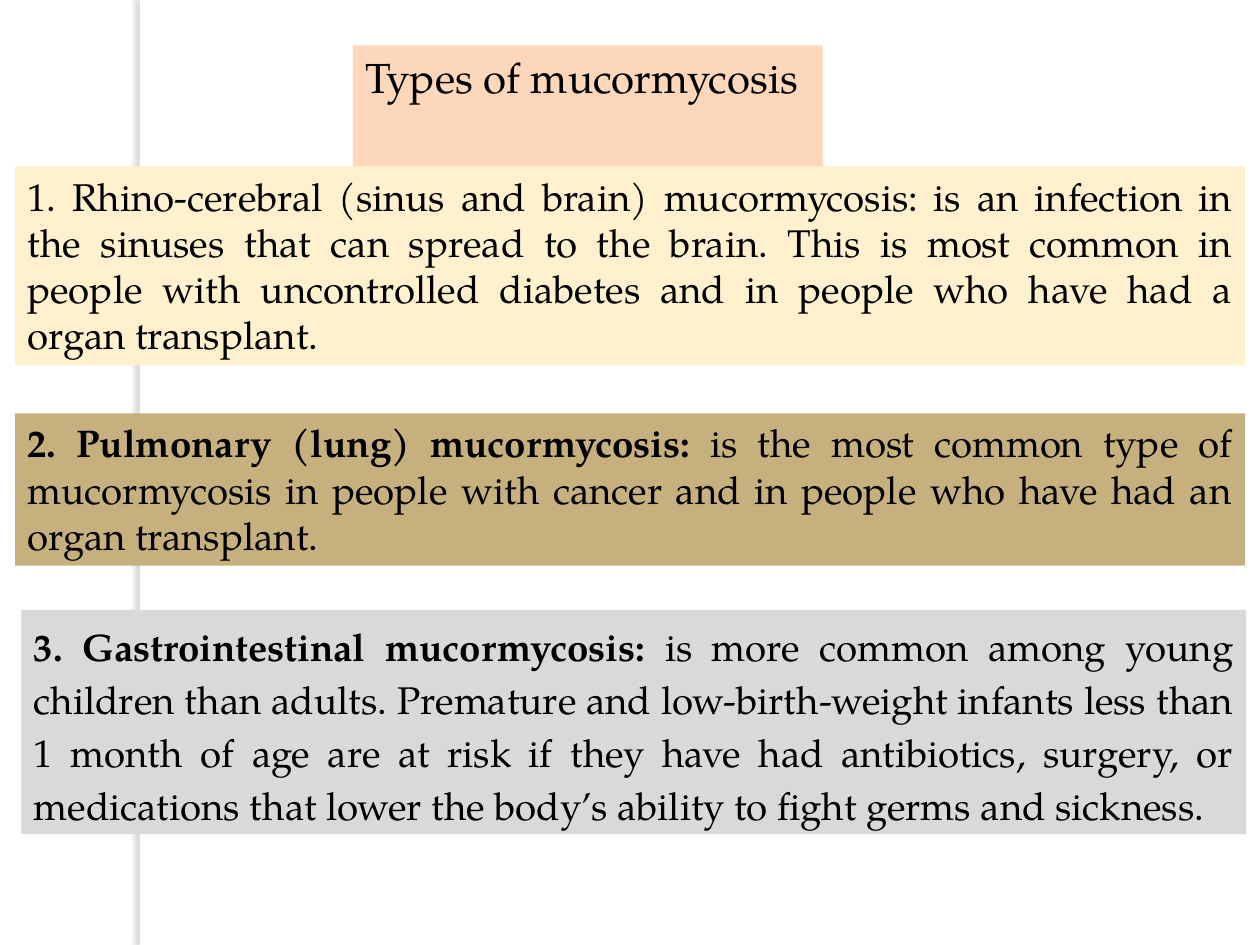
import pptx
import pptx.util
import pptx.dml.color
import pptx.enum.shapes
import pptx.enum.text
import pptx.oxml

Inches = pptx.util.Inches
Pt = pptx.util.Pt
RGB = pptx.dml.color.RGBColor.from_string
COLORS = {
    "white": "FFFFFF",
    "text": "000000",
    "stripe_shadow": "736F63",
    "title": "FDD7BA",
    "rhino": "FFF1CE",
    "pulmonary": "C6B07E",
    "gastro": "D9D9D9",
}
FONT = "TeX Gyre Pagella"


def fill_with(shape, color):
    shape.fill.solid()
    shape.fill.fore_color.rgb = RGB(COLORS[color])


def format_run(run, size, bold=False):
    run.font.name = FONT
    run.font.size = Pt(size)
    run.font.bold = bold
    run.font.color.rgb = RGB(COLORS["text"])


prs = pptx.Presentation()
prs.slide_width = Inches(10)
prs.slide_height = Inches(7.5)
slide = prs.slides.add_slide(prs.slide_layouts[5])

stripe = slide.shapes.add_shape(
    pptx.enum.shapes.MSO_SHAPE.RECTANGLE, Inches(1.11), 0, Inches(0.08), Inches(7.5))
fill_with(stripe, "white")
stripe.line.fill.background()
stripe._element.spPr.append(pptx.oxml.parse_xml(
    '<a:effectLst xmlns:a="http://schemas.openxmlformats.org/drawingml/2006/main">'
    f'<a:outerShdw blurRad="{Pt(3)}" dist="{Pt(3)}" dir="10800000" algn="tl" rotWithShape="0">'
    f'<a:srgbClr val="{COLORS["stripe_shadow"]}"><a:alpha val="25000"/></a:srgbClr>'
    '</a:outerShdw></a:effectLst>'))

title = slide.shapes.title
title.left, title.top = Inches(2.8), Inches(0.36)
title.width, title.height = Inches(3.73), Inches(0.5)
fill_with(title, "title")
title.text_frame.text = "Types of mucormycosis"
title.text_frame.word_wrap = False
title.text_frame.auto_size = pptx.enum.text.MSO_AUTO_SIZE.SHAPE_TO_FIT_TEXT
title.text_frame.vertical_anchor = pptx.enum.text.MSO_ANCHOR.TOP
title.text_frame.paragraphs[0].alignment = pptx.enum.text.PP_ALIGN.LEFT
format_run(title.text_frame.paragraphs[0].runs[0], 24)

types = [
    ("rhino", 0.12, 1.32, 9.76, 1.58, 1.0, 0, "",
     "1. Rhino-cerebral (sinus and brain) mucormycosis: is an infection in the sinuses "
     "that can spread to the brain. This is most common in people with uncontrolled "
     "diabetes and in people who have had a organ transplant. "),
    ("pulmonary", 0.12, 3.28, 9.76, 1.21, 1.0, 10, "2. Pulmonary (lung) mucormycosis:",
     " is the most common type of mucormycosis in people with cancer and in people "
     "who have had an organ transplant."),
    ("gastro", 0.17, 4.84, 9.72, 1.78, 1.15, 10, "3. Gastrointestinal mucormycosis:",
     " is more common among young children than adults. Premature and low-birth-weight "
     "infants less than 1 month of age are at risk if they have had antibiotics, surgery, "
     "or medications that lower the body’s ability to fight germs and sickness. "),
]
for color, left, top, width, height, spacing, after, heading, description in types:
    panel = slide.shapes.add_textbox(Inches(left), Inches(top), Inches(width), Inches(height))
    fill_with(panel, color)
    panel.text_frame.word_wrap = True
    panel.text_frame.auto_size = pptx.enum.text.MSO_AUTO_SIZE.SHAPE_TO_FIT_TEXT
    paragraph = panel.text_frame.paragraphs[0]
    paragraph.alignment = pptx.enum.text.PP_ALIGN.JUSTIFY
    paragraph.line_spacing = spacing
    paragraph.space_after = Pt(after)
    for words, bold in ((heading, True), (description, False)):
        if words:
            run = paragraph.add_run()
            run.text = words
            format_run(run, 22, bold)

prs.save("out.pptx")
